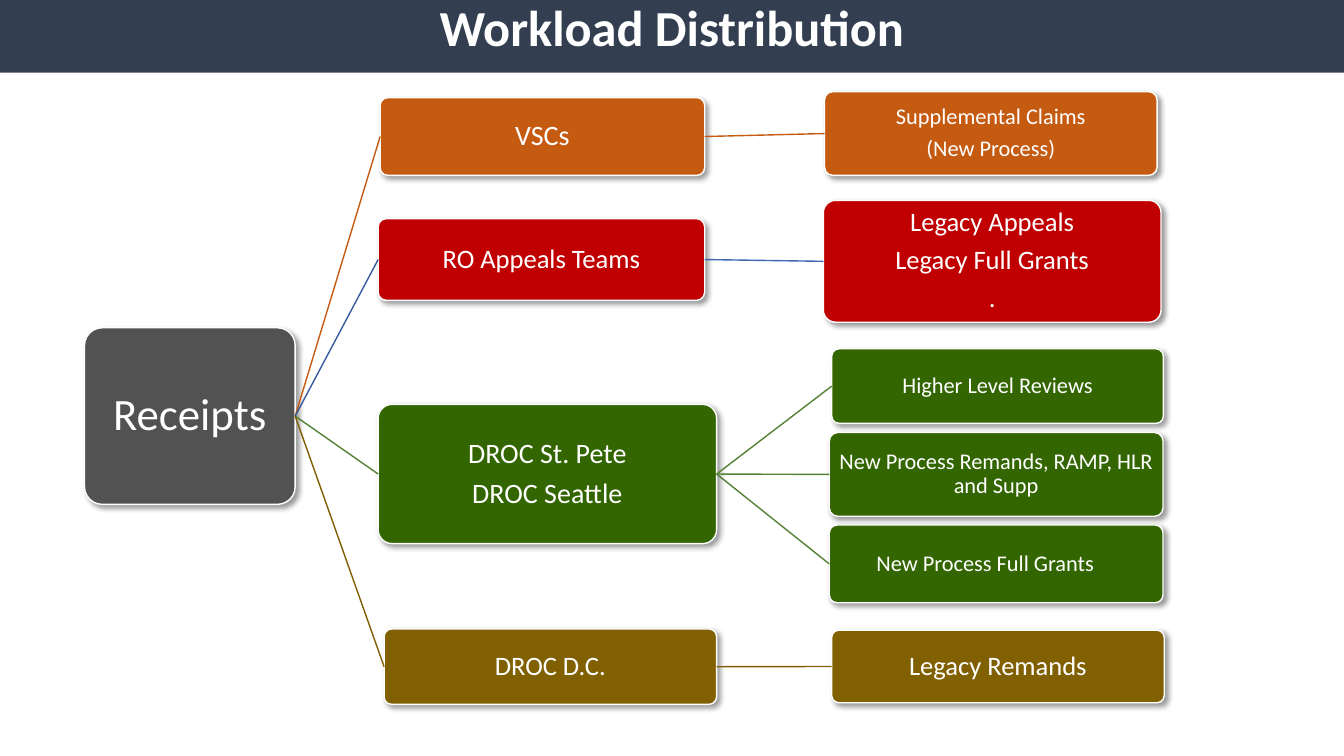
from lxml.etree import SubElement
from pptx import Presentation
from pptx.dml.color import RGBColor
from pptx.enum.shapes import MSO_CONNECTOR, MSO_SHAPE
from pptx.enum.text import MSO_ANCHOR, PP_ALIGN
from pptx.oxml.ns import qn
from pptx.util import Cm, Pt

WHITE = RGBColor(0xFF, 0xFF, 0xFF)
NAVY = RGBColor(0x33, 0x3F, 0x50)
GREY = RGBColor(0x52, 0x52, 0x52)
ORANGE = RGBColor(0xC5, 0x5A, 0x11)
RED = RGBColor(0xC0, 0x00, 0x00)
GREEN = RGBColor(0x33, 0x66, 0x00)
GOLD = RGBColor(0x80, 0x60, 0x00)
BLUE = RGBColor(0x36, 0x5B, 0x9D)
AZURE = RGBColor(0x3E, 0x67, 0xB2)
LEAF = RGBColor(0x54, 0x82, 0x35)

LEFT, RIGHT = 1, 3
ROOT = ((0, 5.95, 5.31, 4.45), ["Receipts"], 32)
TEAMS = [
    (((7.45, 0.15, 8.18, 1.96), ["VSCs"], 20), ORANGE, ORANGE, ORANGE, [
        ((18.65, 0, 8.38, 2.11), ["Supplemental Claims", "(New Process)"], 16)]),
    (((7.4, 3.2, 8.23, 2.06), ["RO Appeals Teams"], 19), RED, BLUE, AZURE, [
        ((18.62, 2.74, 8.51, 3.07),
         ["Legacy Appeals", "Legacy Full Grants", "."], 19)]),
    (((7.4, 7.88, 8.53, 3.51), ["DROC St. Pete", "DROC Seattle"], 20),
     GREEN, LEAF, LEAF, [
        ((18.83, 6.48, 8.36, 1.88), ["Higher Level Reviews"], 16),
        ((18.77, 8.59, 8.41, 2.11),
         ["New Process Remands, RAMP, HLR and Supp"], 16),
        ((18.77, 10.92, 8.41, 1.96), ["New Process Full Grants"], 16, 0.55)]),
    (((7.55, 13.54, 8.38, 1.9), ["DROC D.C."], 19), GOLD, GOLD, GOLD, [
        ((18.83, 13.57, 8.38, 1.83), ["Legacy Remands"], 19)]),
]


def put(item, vals):
    """Set each named value on the item."""
    for key, val in vals.items():
        setattr(item, key, val)


def write(shape, lines, size, bold=False, pad=0):
    """Fill a shape with centred white paragraphs."""
    frame = shape.text_frame
    put(frame, {"text": "\n".join(lines), "word_wrap": True,
                "vertical_anchor": MSO_ANCHOR.MIDDLE,
                "margin_left": Cm(0.05), "margin_right": Cm(0.05 + pad),
                "margin_top": Cm(0.05), "margin_bottom": Cm(0.05)})
    for para in frame.paragraphs:
        put(para, {"alignment": PP_ALIGN.CENTER, "line_spacing": 0.9,
                   "space_before": Pt(0), "space_after": Pt(0.35 * size)})
        put(para.font, {"name": "Calibri", "size": Pt(size), "bold": bold})
        para.font.color.rgb = WHITE


def shade(shape):
    """Give a shape a soft shadow to the lower right."""
    shape.shadow.inherit = False
    list_ = shape._element.spPr.find(qn("a:effectLst"))
    outer = SubElement(list_, qn("a:outerShdw"), blurRad="50800",
                       dist="38100", dir="2700000", algn="tl", rotWithShape="0")
    tint = SubElement(outer, qn("a:srgbClr"), val="000000")
    SubElement(tint, qn("a:alpha"), val="40000")


def card(slide, box, node, fill):
    """Draw one rounded card, offset from the corner of the box."""
    (x, y, wide, high), lines, size, *pad = node
    shape = slide.shapes.add_shape(
        MSO_SHAPE.ROUNDED_RECTANGLE,
        Cm(box[0] + x), Cm(box[1] + y), Cm(wide), Cm(high))
    shape.adjustments[0] = 0.1
    shape.fill.solid()
    shape.fill.fore_color.rgb = fill
    shape.line.color.rgb = WHITE
    shape.line.width = Pt(1)
    shade(shape)
    write(shape, lines, size, pad=sum(pad))
    return shape


def link(slide, start, end, color):
    """Join the right side of one card to the left side of the next."""
    wire = slide.shapes.add_connector(MSO_CONNECTOR.STRAIGHT, 0, 0, 0, 0)
    wire.begin_connect(start, RIGHT)
    wire.end_connect(end, LEFT)
    wire.line.color.rgb = color
    wire.line.width = Pt(1)
    SubElement(wire._element.spPr, qn("a:effectLst"))


def tree(slide, box):
    """Draw the root, its teams and their tasks within the box."""
    root = card(slide, box, ROOT, GREY)
    for node, fill, stem, twig, tasks in TEAMS:
        team = card(slide, box, node, fill)
        link(slide, root, team, stem)
        for task in tasks:
            link(slide, team, card(slide, box, task, fill), twig)


def banner(slide, box):
    """Draw the dark band with the slide title on it."""
    x, y, wide, high = box
    band = slide.shapes.add_shape(
        MSO_SHAPE.RECTANGLE, Cm(x), Cm(y), Cm(wide), Cm(high))
    band.shadow.inherit = False
    band.fill.solid()
    band.fill.fore_color.rgb = NAVY
    band.line.fill.background()
    title = slide.shapes.title
    put(title, {"left": Cm(x + (wide - 25.4) / 2), "top": Cm(y),
                "width": Cm(25.4), "height": Cm(1.52)})
    write(title, ["Workload Distribution"], 36, bold=True)
    band._element.addnext(title._element)


def main():
    """Build the slide and save it."""
    deck = Presentation()
    put(deck, {"slide_width": Cm(33.87), "slide_height": Cm(19.05)})
    slide = deck.slides.add_slide(deck.slide_layouts[5])
    banner(slide, (0, 0, 33.87, 1.83))
    tree(slide, (2.13, 2.31, 27.21, 15.44))
    deck.save("out.pptx")


if __name__ == "__main__":
    main()
